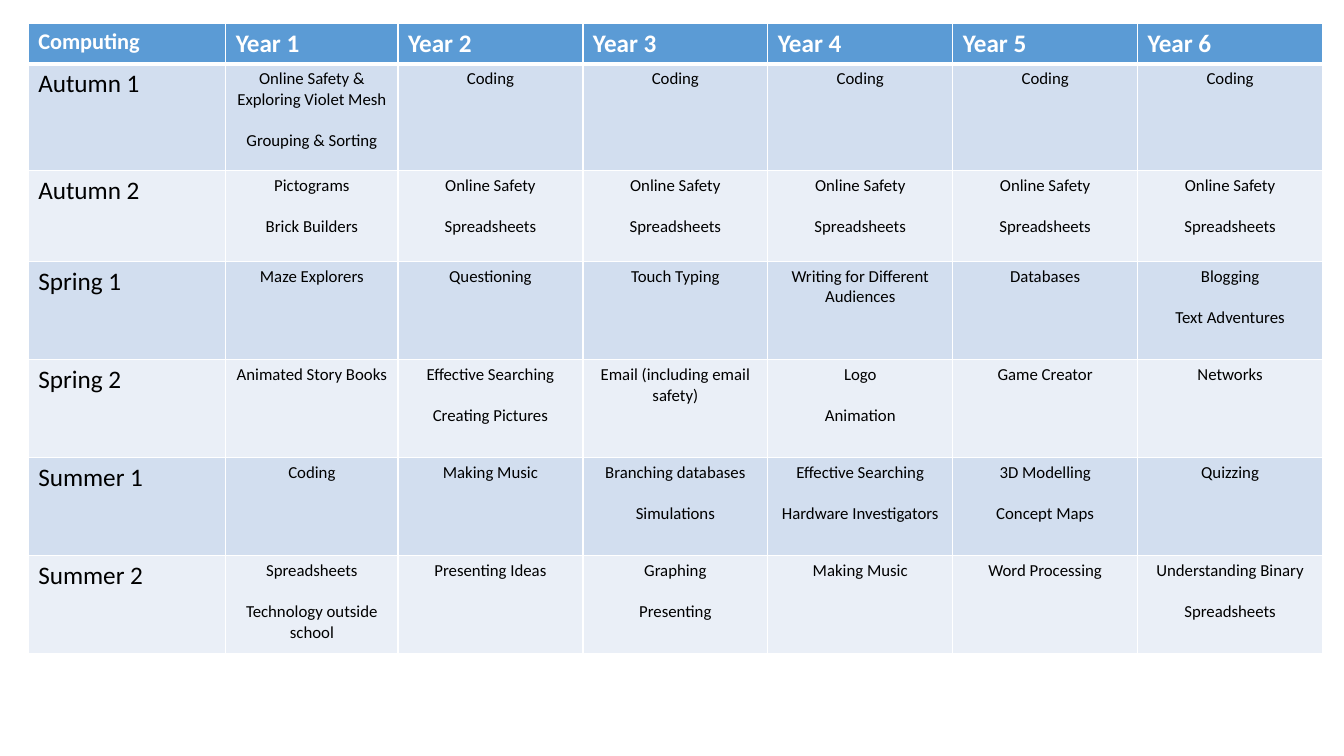
"""Build a one-slide computing curriculum table by year and half term."""
from pptx import Presentation
from pptx.dml.color import RGBColor
from pptx.enum.text import PP_ALIGN
from pptx.oxml.ns import qn
from pptx.util import Cm, Pt
from lxml import etree

LEFT, CENTER = PP_ALIGN.LEFT, PP_ALIGN.CENTER

HEAD = ["Computing"] + [f"Year {year}" for year in range(1, 7)]
SAFE = ("Online Safety", "Spreadsheets")
TERMS = [
    ("Autumn 1", [("Online Safety & Exploring Violet Mesh", "Grouping & Sorting")]
     + [("Coding",)] * 5),
    ("Autumn 2", [("Pictograms", "Brick Builders")] + [SAFE] * 5),
    ("Spring 1", [("Maze Explorers",), ("Questioning",), ("Touch Typing",),
                  ("Writing for Different Audiences",), ("Databases",),
                  ("Blogging", "Text Adventures")]),
    ("Spring 2", [("Animated Story Books",),
                  ("Effective Searching", "Creating Pictures"),
                  ("Email (including email safety)",), ("Logo", "Animation"),
                  ("Game Creator",), ("Networks",)]),
    ("Summer 1", [("Coding",), ("Making Music",),
                  ("Branching databases", "Simulations"),
                  ("Effective Searching", "Hardware Investigators"),
                  ("3D Modelling", "Concept Maps"), ("Quizzing",)]),
    ("Summer 2", [("Spreadsheets", "Technology outside school"),
                  ("Presenting Ideas",), ("Graphing", "Presenting"),
                  ("Making Music",), ("Word Processing",),
                  ("Understanding Binary", "Spreadsheets")]),
]

THEME = {
    "font": "Calibri", "white": "FFFFFF", "black": "000000",
    "head": "5B9BD5", "bands": ("D2DEEF", "EAEFF7"),
    "title": 16, "label": 18, "body": 12, "gap": 14.65,
    "thin": 1, "thick": 3,
}

PAGE = (Cm(33.87), Cm(19.05))
SPOT = (Cm(0.71), Cm(0.58))
COLS = [Cm(4.98), Cm(4.34)] + [Cm(4.66)] * 5
ROWS = [Cm(0.94), Cm(2.69), Cm(2.29)] + [Cm(2.47)] * 4


def write(cell, lines, size, color="black", bold=False, align=LEFT):
    """Fill a cell with one paragraph per line."""
    frame = cell.text_frame
    for pos, line in enumerate(lines):
        para = frame.add_paragraph() if pos else frame.paragraphs[0]
        para.alignment = align
        if pos:
            para.space_before = Pt(THEME["gap"])
        run = para.add_run()
        run.text = line
        font = run.font
        font.name, font.size, font.bold = THEME["font"], Pt(THEME[size]), bold
        font.color.rgb = RGBColor.from_string(THEME[color])


def paint(cell, fill, top, base):
    """Set the borders and fill of a cell."""
    props = cell._tc.get_or_add_tcPr()
    for side, width in (("L", "thin"), ("R", "thin"), ("T", top), ("B", base)):
        line = etree.SubElement(props, qn(f"a:ln{side}"), w=str(Pt(THEME[width])))
        solid = etree.SubElement(line, qn("a:solidFill"))
        etree.SubElement(solid, qn("a:srgbClr"), val=THEME["white"])
    cell.fill.solid()
    cell.fill.fore_color.rgb = RGBColor.from_string(fill)


def main():
    """Lay out the table and save the deck."""
    deck = Presentation()
    deck.slide_width, deck.slide_height = PAGE
    slide = deck.slides.add_slide(deck.slide_layouts[6])
    grid = slide.shapes.add_table(
        len(ROWS), len(COLS), *SPOT, sum(COLS), sum(ROWS)).table
    for col, width in zip(grid.columns, COLS):
        col.width = width
    for row, height in zip(grid.rows, ROWS):
        row.height = height

    for col, name in enumerate(HEAD):
        cell = grid.cell(0, col)
        paint(cell, THEME["head"], "thin", "thick")
        write(cell, [name], "label" if col else "title", color="white", bold=True)

    for row, (term, units) in enumerate(TERMS, 1):
        fill = THEME["bands"][(row - 1) % 2]
        top = "thick" if row == 1 else "thin"
        for col, lines in enumerate([(term,)] + units):
            cell = grid.cell(row, col)
            paint(cell, fill, top, "thin")
            if col:
                write(cell, lines, "body", align=CENTER)
            else:
                write(cell, lines, "label")

    deck.save("out.pptx")


if __name__ == "__main__":
    main()
